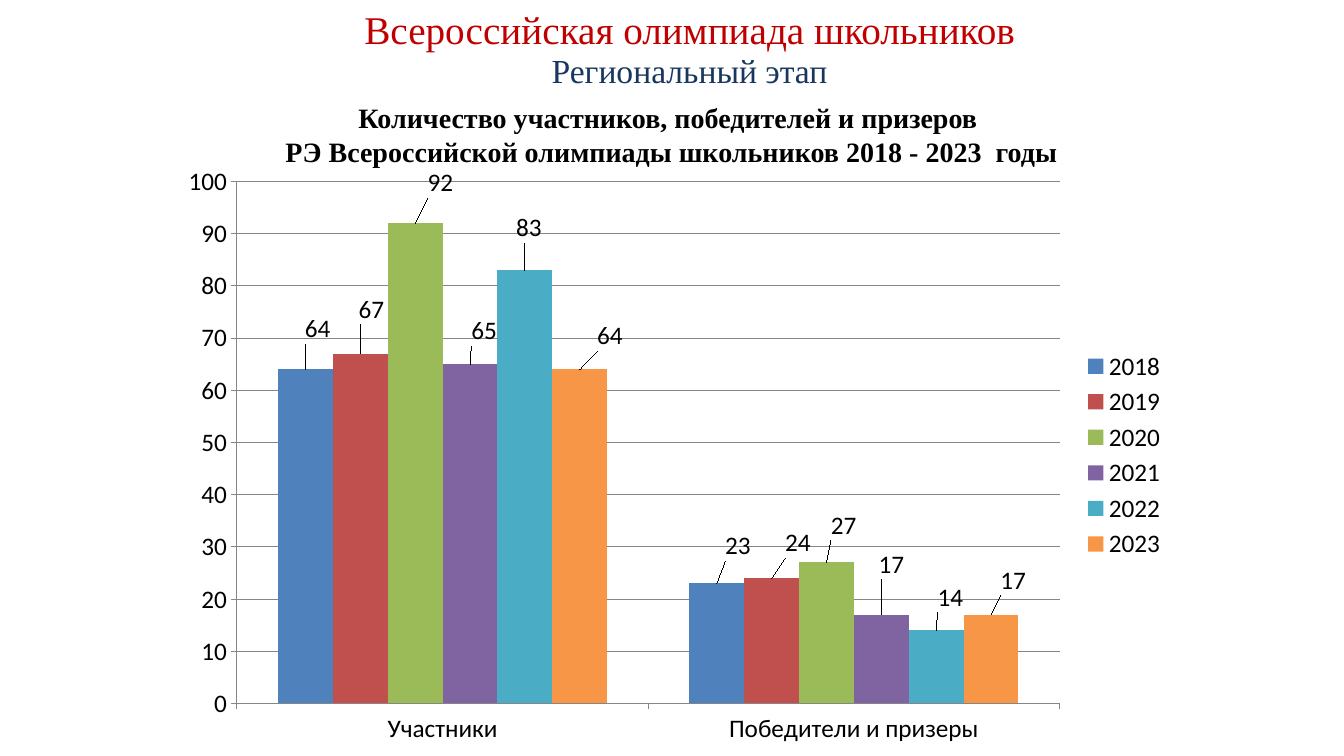
from lxml import etree
from pptx import Presentation
from pptx.chart.data import CategoryChartData
from pptx.dml.color import RGBColor
from pptx.enum import chart as ch, text as tx
from pptx.oxml import ns
from pptx.util import Inches, Pt

RED = RGBColor(0xC0, 0x00, 0x00)
NAVY = RGBColor(0x17, 0x37, 0x5E)
BLACK = RGBColor(0, 0, 0)
GRAY = RGBColor(0x86, 0x86, 0x86)
SERIF = "Times New Roman"

TITLE = ["Всероссийская олимпиада школьников"]
STAGE = ["Региональный этап"]
HEAD = [
    "Количество участников, победителей и призеров ",
    "РЭ Всероссийской олимпиады школьников 2018 - 2023  годы",
]
CATS = ["Участники", "Победители и призеры"]
# year, values, bar colour, label shifts in inches
YEARS = [
    ("2018", (64, 23), RGBColor(0x4F, 0x81, 0xBD), ((0.12, -0.21), (0.21, -0.18))),
    ("2019", (67, 24), RGBColor(0xC0, 0x50, 0x4D), ((0.11, -0.25), (0.26, -0.16))),
    ("2020", (92, 27), RGBColor(0x9B, 0xBB, 0x59), ((0.25, -0.21), (0.17, -0.18))),
    ("2021", (65, 17), RGBColor(0x80, 0x64, 0xA2), ((0.14, -0.14), (0.10, -0.31))),
    ("2022", (83, 14), RGBColor(0x4B, 0xAC, 0xC6), ((0.04, -0.23), (0.14, -0.14))),
    ("2023", (64, 17), RGBColor(0xF7, 0x96, 0x46), ((0.30, -0.14), (0.22, -0.15))),
]
WIDE, HIGH = 10, 5.97
PLOT = {"x": 0.07, "y": 0.05, "w": 0.81, "h": 0.86}
PLOT = {"x": 0.68 / WIDE, "y": 0.27 / HIGH, "w": 8.16 / WIDE, "h": 5.18 / HIGH}


def layout(**vals):
    """Make a manual chart layout."""
    root = etree.Element(ns.qn("c:layout"))
    man = etree.SubElement(root, ns.qn("c:manualLayout"))
    if "w" in vals:
        modes = [("layoutTarget", "inner"), ("xMode", "edge"), ("yMode", "edge")]
    else:
        modes = []
    for tag, val in modes + list(vals.items()):
        etree.SubElement(man, ns.qn("c:" + tag)).set("val", str(val))
    return root


def write(box, lines, size, color, bold=False):
    """Fill a box with centred lines."""
    frame = box.text_frame
    frame.word_wrap = True
    frame.vertical_anchor = tx.MSO_ANCHOR.TOP
    frame.auto_size = tx.MSO_AUTO_SIZE.SHAPE_TO_FIT_TEXT
    for n, line in enumerate(lines):
        para = frame.add_paragraph() if n else frame.paragraphs[0]
        para.alignment = tx.PP_ALIGN.CENTER
        run = para.add_run()
        run.text = line
        font = run.font
        font.name, font.size, font.bold = SERIF, Pt(size), bold
        font.color.rgb = color


def draw(slide):
    """Add the column chart."""
    data = CategoryChartData()
    data.categories = CATS
    for year, vals, _, _ in YEARS:
        data.add_series(year, vals)
    chart = slide.shapes.add_chart(
        ch.XL_CHART_TYPE.COLUMN_CLUSTERED,
        Inches(1.67), Inches(1.53), Inches(WIDE), Inches(HIGH), data).chart
    chart.has_title = False
    chart.font.name, chart.font.size = "Calibri", Pt(18)
    chart.font.color.rgb = BLACK
    chart.has_legend = True
    chart.legend.position = ch.XL_LEGEND_POSITION.RIGHT
    chart.legend.include_in_layout = False

    axis = chart.value_axis
    axis.minimum_scale, axis.maximum_scale, axis.major_unit = 0, 100, 10
    axis.major_gridlines.format.line.color.rgb = GRAY
    for side in (axis, chart.category_axis):
        side.major_tick_mark = ch.XL_TICK_MARK.OUTSIDE
        side.format.line.color.rgb = GRAY

    plot = chart.plots[0]
    plot.gap_width, plot.overlap, plot.vary_by_categories = 150, 0, False
    for bars, (_, _, color, shifts) in zip(plot.series, YEARS):
        bars.format.fill.solid()
        bars.format.fill.fore_color.rgb = color
        bars.data_labels.show_value = True
        for n, (dx, dy) in enumerate(shifts):
            label = bars.points[n].data_label
            label.position = ch.XL_LABEL_POSITION.OUTSIDE_END
        marks = bars.data_labels._element.findall(ns.qn("c:dLbl"))
        for mark, (dx, dy) in zip(marks, shifts):
            mark.insert(1, layout(x=round(dx / WIDE, 4), y=round(dy / HIGH, 4)))

    area = chart._chartSpace.chart.plotArea
    for old in area.findall(ns.qn("c:layout")):
        area.remove(old)
    area.insert(0, layout(**PLOT))


def main():
    """Build and save the slide."""
    deck = Presentation()
    deck.slide_width, deck.slide_height = Inches(13.33), Inches(7.5)
    slide = deck.slides.add_slide(deck.slide_layouts[5])
    draw(slide)
    head = slide.shapes.add_textbox(Inches(1.79), Inches(0.95), Inches(9.74), Inches(0.77))
    write(head, HEAD, 20, BLACK, True)
    stage = slide.shapes.add_textbox(Inches(2.01), Inches(0.45), Inches(9.66), Inches(0.5))
    write(stage, STAGE, 24, NAVY)
    title = slide.shapes.title
    title.left, title.top = Inches(2.01), Inches(0)
    title.width, title.height = Inches(9.66), Inches(0.57)
    write(title, TITLE, 28, RED)
    deck.save("out.pptx")


if __name__ == "__main__":
    main()
